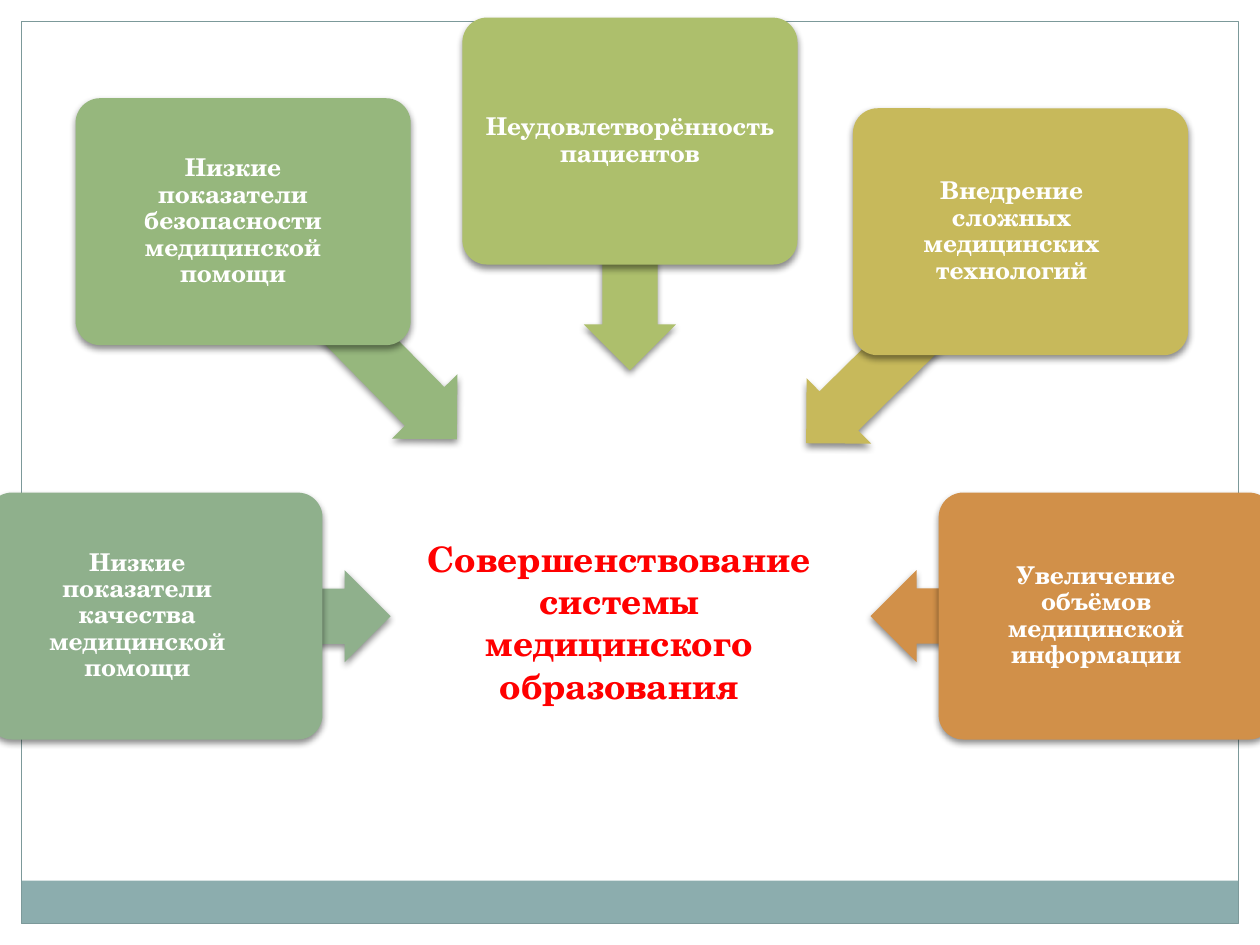
from math import cos, radians, sin

from lxml import etree
from pptx import Presentation
from pptx.dml.color import RGBColor
from pptx.enum.shapes import MSO_SHAPE
from pptx.enum.text import MSO_ANCHOR, PP_ALIGN
from pptx.oxml.ns import qn
from pptx.util import Inches, Pt

RECT, CARD, ARROW = MSO_SHAPE.RECTANGLE, MSO_SHAPE.ROUNDED_RECTANGLE, MSO_SHAPE.LEFT_ARROW
MIDDLE, CENTER = MSO_ANCHOR.MIDDLE, PP_ALIGN.CENTER

# The slide is a grid of 100 columns and 75 rows of square cells.
COLUMNS, ROWS = 100, 75
CELL = Inches(0.1)
FONT = "TeX Gyre Schola"
CARD_SIZE = (26.6, 19.6)
ARROW_THICKNESS = 7.3
PADDING = 0.3

# centre column, centre row, arrow direction, arrow length, right padding, colour, lines
CAUSES = [
    (12.3, 48.9, 0, 18.7, 3.1, "8FB08C",
     ["Низкие", "показатели", "качества", "медицинской", "помощи"]),
    (19.3, 17.6, 45.5, 24.2, 1.9, "96B77D",
     ["Низкие", "показатели", "безопасности", "медицинской", "помощи"]),
    (50, 11.2, 90, 18.2, PADDING, "ADBF6C",
     ["Неудовлетворённость", "пациентов"]),
    (81, 18.4, 135.4, 23.9, 1.7, "C7B95B",
     ["Внедрение", "сложных", "медицинских", "технологий"]),
    (87.8, 48.9, 180, 18.7, 1.9, "D19049",
     ["Увеличение", "объёмов", "медицинской", "информации"]),
]


def rgb(value):
    return RGBColor.from_string(value)


def cells(*counts):
    return [round(count * CELL) for count in counts]


def centred(x, y, width, height):
    """Box of the given size around a centre point."""
    return x - width / 2, y - height / 2, width, height


def set_all(target, values):
    for name, value in values.items():
        setattr(target, name, value)


def add_block(slide, kind, box, fill=None, line=None, adjustments=()):
    block = slide.shapes.add_shape(kind, *cells(*box))
    block.shadow.inherit = False
    for index, value in enumerate(adjustments):
        block.adjustments[index] = value
    if fill:
        block.fill.solid()
        block.fill.fore_color.rgb = rgb(fill)
    else:
        block.fill.background()
    if line:
        block.line.color.rgb = rgb(line)
        block.line.width = Pt(0.75)
    else:
        block.line.fill.background()
    return block


def add_soft_shadow(block):
    effects = block._element.spPr.find(qn("a:effectLst"))
    shadow = etree.SubElement(effects, qn("a:outerShdw"), blurRad=str(Pt(4)),
                              dist=str(Pt(2)), dir="5400000", rotWithShape="0")
    black = etree.SubElement(shadow, qn("a:srgbClr"), val="000000")
    etree.SubElement(black, qn("a:alpha"), val="45000")


def write(paragraph, text, size, color):
    paragraph.text = text
    paragraph.alignment = CENTER
    set_all(paragraph.font, {"name": FONT, "size": Pt(size), "bold": True})
    paragraph.font.color.rgb = rgb(color)


def add_frame(slide, box):
    left, top, width, height = box
    band = 3.4
    add_block(slide, RECT, (left, top + height - band, width, band), fill="8CADAE")
    add_block(slide, RECT, box, line="7C999A")


def add_cause(slide, x, y, direction, length, right_padding, color, lines):
    """Card with an arrow that runs out from the card's centre."""
    angle = radians(direction)
    arrow_x, arrow_y = x + length / 2 * cos(angle), y + length / 2 * sin(angle)
    arrow = add_block(slide, ARROW, centred(arrow_x, arrow_y, length, ARROW_THICKNESS),
                      color, adjustments=(0.6, 0.5))
    arrow.rotation = (direction + 180) % 360
    card = add_block(slide, CARD, centred(x, y, *CARD_SIZE), color, adjustments=(0.1,))
    for block in (arrow, card):
        add_soft_shadow(block)

    pad, right = cells(PADDING, right_padding)
    set_all(card.text_frame, {
        "word_wrap": True, "vertical_anchor": MIDDLE, "margin_left": pad,
        "margin_top": pad, "margin_right": right, "margin_bottom": pad,
    })
    label = card.text_frame.paragraphs[0]
    write(label, "\v".join(lines), 14, "FFFFFF")
    label.line_spacing = 0.9


def add_goal(slide, box):
    goal = slide.shapes.add_textbox(*cells(*box)).text_frame
    goal.word_wrap = True
    write(goal.paragraphs[0], "Совершенствование", 20, "FF0000")
    write(goal.add_paragraph(), "системы медицинского образования", 20, "FF0000")


def main():
    presentation = Presentation()
    presentation.slide_width, presentation.slide_height = cells(COLUMNS, ROWS)
    slide = presentation.slides.add_slide(presentation.slide_layouts[6])
    margin = 1.7
    add_frame(slide, (margin, margin, COLUMNS - 2 * margin, ROWS - 2 * margin))
    for cause in CAUSES:
        add_cause(slide, *cause)
    add_goal(slide, (31.2, 42.2, 35.9, 14.5))
    presentation.save("out.pptx")


if __name__ == "__main__":
    main()
